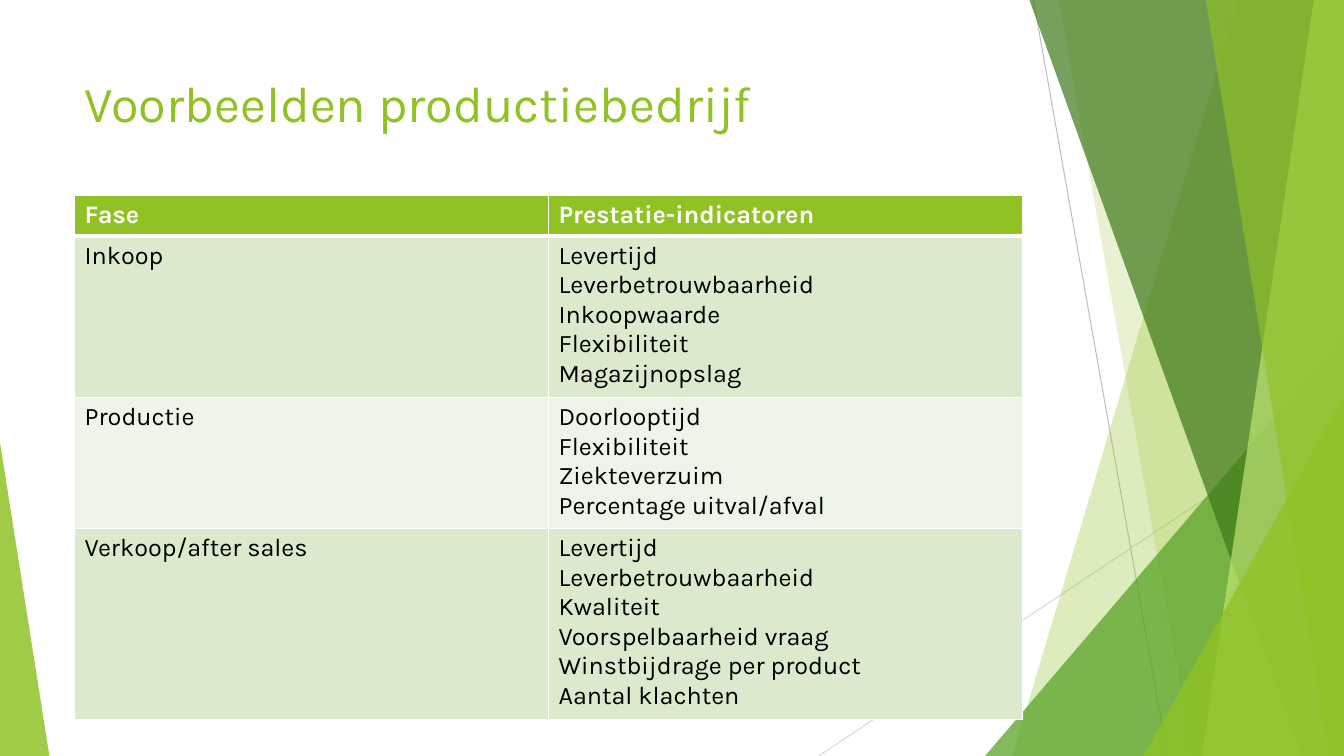
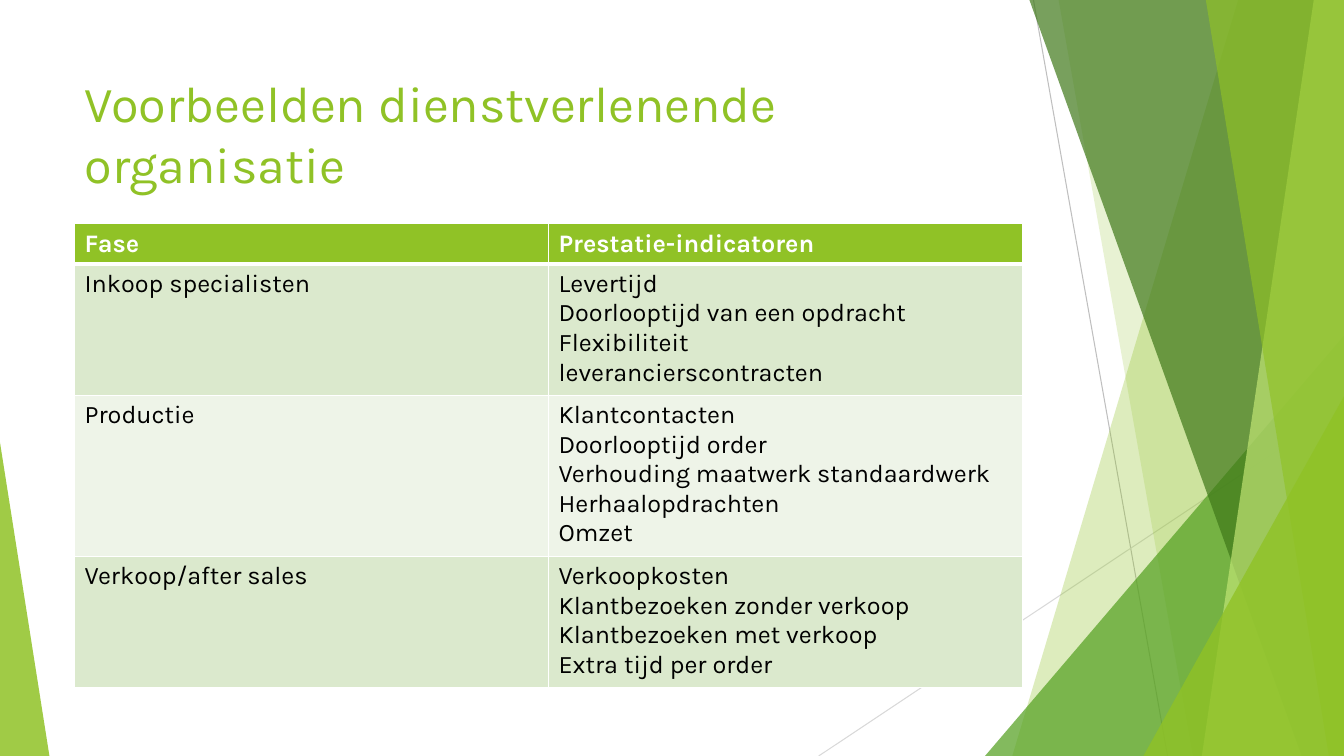
from dataclasses import dataclass

from lxml import etree
from pptx import Presentation
from pptx.dml.color import RGBColor
from pptx.enum import shapes, text
from pptx.oxml import ns
from pptx.util import Inches, Pt


@dataclass(frozen=True)
class Theme:
    font: str = "Karla"
    title_size: int = 36
    table_size: int = 18
    lime: str = "90C226"
    green: str = "54A021"
    forest: str = "3F7819"
    pale_lime: str = "C0E474"
    light_grey: str = "D9D9D9"
    grey: str = "BFBFBF"
    white: str = "FFFFFF"
    black: str = "000000"
    row_fills: tuple = ("DBE9CD", "EEF4E8")


theme = Theme()
WIDTH, HEIGHT = 13.33, 7.5
LEFT, CONTENT_WIDTH = 0.74, 9.4
LINE_HEIGHT, CELL_PADDING = 0.29, 0.1

# Background: lines (start, end, colour)
lines = [
    ((10.25, 0), (11.58, HEIGHT), theme.grey),
    ((WIDTH, 4.03), (8.12, HEIGHT), theme.light_grey),
]
# Bands run to the right edge: (kind, top x, bottom x, colour, opacity %)
# Wedges stand on the bottom edge: (kind, (left, top, width, apex), colour, opacity %)
facets = [
    ("band", (12.28, 10.04), theme.lime, 30),
    ("band", (10.5, 11.83), theme.lime, 20),
    ("wedge", (9.77, 3.33, 3.56, 1), theme.green, 72),
    ("band", (10.21, 12.91), theme.forest, 70),
    ("band", (13.03, 11.92), theme.pale_lime, 70),
    ("band", (11.96, 13.18), theme.lime, 65),
    ("wedge", (11.34, 3.93, 1.99, 1), theme.lime, 80),
    ("wedge", (0, 4.39, 0.49, 0), theme.lime, 85),
]

# Slide content: title, table top, phases with their indicators
slides = [
    ("Voorbeelden productiebedrijf", 1.94, [
        ("Inkoop", ["Levertijd", "Leverbetrouwbaarheid", "Inkoopwaarde",
                    "Flexibiliteit", "Magazijnopslag"]),
        ("Productie", ["Doorlooptijd", "Flexibiliteit", "Ziekteverzuim",
                       "Percentage uitval/afval"]),
        ("Verkoop/after sales", ["Levertijd", "Leverbetrouwbaarheid", "Kwaliteit",
                                 "Voorspelbaarheid vraag", "Winstbijdrage per product",
                                 "Aantal klachten"]),
    ]),
    ("Voorbeelden dienstverlenende organisatie", 2.22, [
        ("Inkoop specialisten", ["Levertijd", "Doorlooptijd van een opdracht",
                                 "Flexibiliteit", "leverancierscontracten"]),
        ("Productie", ["Klantcontacten", "Doorlooptijd order",
                       "Verhouding maatwerk standaardwerk", "Herhaalopdrachten", "Omzet"]),
        ("Verkoop/after sales", ["Verkoopkosten", "Klantbezoeken zonder verkoop",
                                 "Klantbezoeken met verkoop", "Extra tijd per order"]),
    ]),
]


def write(frame, paragraphs, size, colour, bold=False):
    for index, wording in enumerate(paragraphs):
        para = frame.paragraphs[0] if index == 0 else frame.add_paragraph()
        span = para.add_run()
        span.text = wording
        span.font.name = theme.font
        span.font.size = Pt(size)
        span.font.bold = bold
        span.font.color.rgb = RGBColor.from_string(colour)


def add_border(cell, side, points):
    border = etree.SubElement(cell._tc.get_or_add_tcPr(), ns.qn(f"a:ln{side}"),
                              w=str(Pt(points)))
    fill = etree.SubElement(border, ns.qn("a:solidFill"))
    etree.SubElement(fill, ns.qn("a:srgbClr"), val=theme.white)


deck = Presentation()
deck.slide_width, deck.slide_height = Inches(WIDTH), Inches(HEIGHT)

for title, table_top, phases in slides:
    page = deck.slides.add_slide(deck.slide_layouts[6])

    # Thin background lines
    for start, end, colour in lines:
        line = page.shapes.add_connector(shapes.MSO_CONNECTOR.STRAIGHT,
                                         *map(Inches, start + end))
        line.line.color.rgb = RGBColor.from_string(colour)
        line.line.width = Pt(0.75)
        etree.SubElement(line._element.spPr, ns.qn("a:effectLst"))

    # Translucent facets
    for kind, geometry, colour, opacity in facets:
        if kind == "band":
            top_x, bottom_x = geometry
            corners = [(WIDTH, 0), (WIDTH, HEIGHT), (bottom_x, HEIGHT)]
            outline = page.shapes.build_freeform(Inches(top_x), 0)
            outline.add_line_segments([(Inches(x), Inches(y)) for x, y in corners])
            facet = outline.convert_to_shape()
        else:
            left, top, width, apex = geometry
            facet = page.shapes.add_shape(
                shapes.MSO_SHAPE.ISOSCELES_TRIANGLE,
                *map(Inches, (left, top, width, HEIGHT - top)))
            facet.adjustments[0] = apex
        facet.shadow.inherit = False
        facet.line.fill.background()
        facet.fill.solid()
        facet.fill.fore_color.rgb = RGBColor.from_string(colour)
        tint = facet._element.spPr.find(".//" + ns.qn("a:srgbClr"))
        etree.SubElement(tint, ns.qn("a:alpha"), val=str(opacity * 1000))

    # Title
    box = page.shapes.add_textbox(*map(Inches, (LEFT, 0.67, CONTENT_WIDTH, 1.44)))
    box.text_frame.word_wrap = True
    box.text_frame.vertical_anchor = text.MSO_ANCHOR.TOP
    write(box.text_frame, [title], theme.title_size, theme.lime)

    # Table of phases and indicators
    rows = [("Fase", ["Prestatie-indicatoren"])] + phases
    heights = [CELL_PADDING + LINE_HEIGHT * len(indicators) for _, indicators in rows]
    table = page.shapes.add_table(
        len(rows), 2,
        *map(Inches, (LEFT, table_top, CONTENT_WIDTH, sum(heights)))).table
    for row, (phase, indicators) in enumerate(rows):
        table.rows[row].height = Inches(heights[row])
        header = row == 0
        fill = theme.lime if header else theme.row_fills[(row - 1) % 2]
        for column, paragraphs in enumerate(([phase], indicators)):
            cell = table.cell(row, column)
            add_border(cell, "L", 1)
            add_border(cell, "R", 1)
            add_border(cell, "T", 3 if row == 1 else 1)
            add_border(cell, "B", 3 if header else 1)
            cell.fill.solid()
            cell.fill.fore_color.rgb = RGBColor.from_string(fill)
            write(cell.text_frame, paragraphs, theme.table_size,
                  theme.white if header else theme.black, bold=header)

deck.save("out.pptx")
